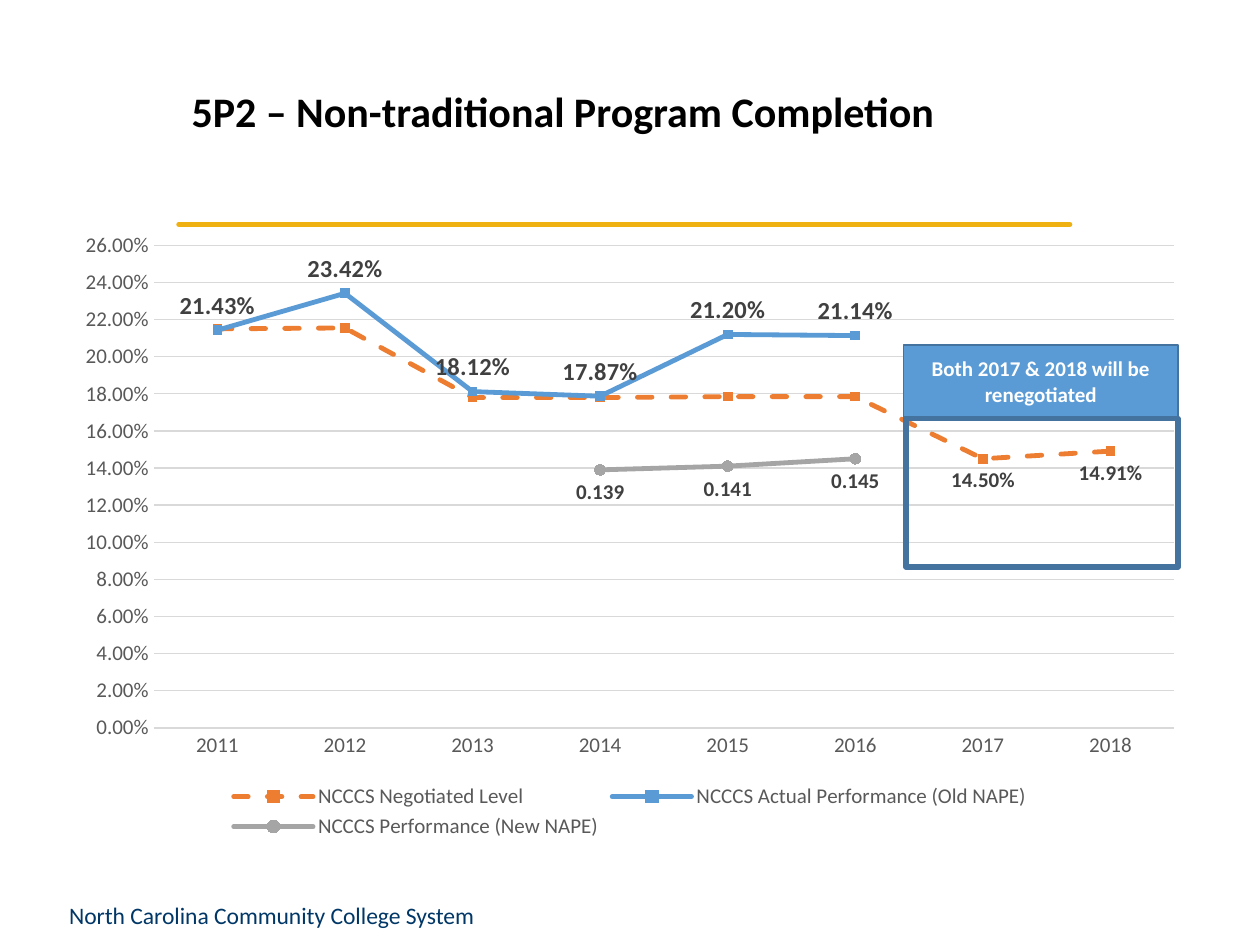
from lxml import etree
from pptx import Presentation
from pptx import util as u
from pptx.chart.data import CategoryChartData
from pptx.dml.color import RGBColor
from pptx.enum import chart as ch, dml, shapes, text
from pptx.oxml import ns

ORANGE, BLUE, GRAY = "ED7D31", "5B9BD5", "A5A5A5"
BORDER, GRID, AXIS_TEXT, LABEL_TEXT = "43739E", "D9D9D9", "595959", "404040"


def rgb(value):
    return RGBColor.from_string(value)


def box(*lengths):
    return [u.Inches(length) for length in lengths]


class SlideBuilder:
    font_name = "Calibri"

    def __init__(self, slide):
        self.slide = slide

    def style_font(self, font, size, color, bold=False):
        font.name = self.font_name
        font.size = u.Pt(size)
        font.bold = bold
        font.color.rgb = rgb(color)

    def style_line(self, line, color, width):
        line.color.rgb = rgb(color)
        line.width = u.Pt(width)

    def set_wording(self, frame, wording, size, color, bold=False, align=text.PP_ALIGN.LEFT):
        frame.text = wording
        frame.word_wrap = True
        paragraph = frame.paragraphs[0]
        paragraph.alignment = align
        self.style_font(paragraph.runs[0].font, size, color, bold)
        return paragraph

    def title(self, wording, area):
        heading = self.slide.shapes.title
        heading.left, heading.top, heading.width, heading.height = box(*area)
        heading.text_frame.vertical_anchor = text.MSO_ANCHOR.MIDDLE
        paragraph = self.set_wording(heading.text_frame, wording, 24, "000000", True)
        paragraph.line_spacing = 0.9

    def rule(self, start, end, color, width):
        connector = self.slide.shapes.add_connector(
            shapes.MSO_CONNECTOR.STRAIGHT, *box(*start, *end))
        self.style_line(connector.line, color, width)
        properties = connector._element.spPr
        properties.find(ns.qn("a:ln")).set("cap", "rnd")
        etree.SubElement(properties, ns.qn("a:effectLst"))

    def footer(self, wording, area):
        frame = self.slide.shapes.add_textbox(*box(*area)).text_frame
        self.set_wording(frame, wording, 13.5, "003767")

    def rectangle(self, area, line_width, fill=None, wording=None):
        panel = self.slide.shapes.add_shape(shapes.MSO_SHAPE.RECTANGLE, *box(*area))
        panel.shadow.inherit = False
        self.style_line(panel.line, BORDER, line_width)
        if fill:
            panel.fill.solid()
            panel.fill.fore_color.rgb = rgb(fill)
        else:
            panel.fill.background()
        if wording:
            panel.text_frame.vertical_anchor = text.MSO_ANCHOR.MIDDLE
            self.set_wording(panel.text_frame, wording, 12, "FFFFFF", True, text.PP_ALIGN.CENTER)

    def line_chart(self, area, years, measures):
        data = CategoryChartData()
        data.categories = years
        for name, values, number_format, *_ in measures:
            data.add_series(name, values, number_format)
        chart = self.slide.shapes.add_chart(
            ch.XL_CHART_TYPE.LINE_MARKERS, *box(*area), data).chart
        chart.has_title = False
        self.style_font(chart.font, 10, "000000")
        chart.has_legend = True
        chart.legend.position = ch.XL_LEGEND_POSITION.BOTTOM
        chart.legend.include_in_layout = False
        self.style_font(chart.legend.font, 12, AXIS_TEXT)
        self.axes(chart)
        plot = chart.plots[0]
        plot.vary_by_categories = False
        for series, (_, _, number_format, *look) in zip(plot.series, measures):
            self.series(series, number_format, *look)
        return plot

    def axes(self, chart):
        years, rates = chart.category_axis, chart.value_axis
        for axis in (years, rates):
            axis.major_tick_mark = ch.XL_TICK_MARK.NONE
            axis.minor_tick_mark = ch.XL_TICK_MARK.NONE
            self.style_font(axis.tick_labels.font, 12, AXIS_TEXT)
        self.style_line(years.format.line, GRID, 1)
        rates.format.line.fill.background()
        rates.minimum_scale, rates.maximum_scale, rates.major_unit = 0, 0.26, 0.02
        rates.tick_labels.number_format = "0.00%"
        rates.tick_labels.number_format_is_linked = False
        self.style_line(rates.major_gridlines.format.line, GRID, 0.75)

    def series(self, series, number_format, color, marker, marker_size, position, size, dashed):
        series.smooth = False
        line = series.format.line
        self.style_line(line, color, 2.75)
        if dashed:
            line.dash_style = dml.MSO_LINE.DASH
        series._element.spPr.find(ns.qn("a:ln")).set("cap", "rnd")
        series.marker.style = marker
        series.marker.size = marker_size
        series.marker.format.fill.solid()
        series.marker.format.fill.fore_color.rgb = rgb(color)
        self.style_line(series.marker.format.line, color, 0.75)
        labels = series.data_labels
        labels.show_value = True
        labels.position = position
        labels.number_format = number_format
        labels.number_format_is_linked = False
        self.style_font(labels.font, size, LABEL_TEXT, True)

    def hide_labels(self, series, indexes):
        labels = series.data_labels._element
        for place, index in enumerate(indexes):
            label = etree.Element(ns.qn("c:dLbl"))
            etree.SubElement(label, ns.qn("c:idx")).set("val", str(index))
            etree.SubElement(label, ns.qn("c:delete")).set("val", "1")
            labels.insert(place, label)


def main():
    deck = Presentation()
    deck.slide_width, deck.slide_height = box(10, 7.5)
    builder = SlideBuilder(deck.slides.add_slide(deck.slide_layouts[5]))

    builder.rule((1.42, 1.78), (8.49, 1.78), "EEB111", 3)
    builder.footer("North Carolina Community College System", (0.45, 7.1, 3.55, 0.4))
    builder.title("5P2 – Non-traditional Program Completion", (1.42, 0.18, 8.05, 1.45))

    square, circle = ch.XL_MARKER_STYLE.SQUARE, ch.XL_MARKER_STYLE.CIRCLE
    above, below = ch.XL_LABEL_POSITION.ABOVE, ch.XL_LABEL_POSITION.BELOW
    measures = [
        ("NCCCS Negotiated Level",
         (0.215, 0.2155, 0.178, 0.178, 0.1785, 0.1785, 0.145, 0.1491),
         "0.00%", ORANGE, square, 5, below, 12, True),
        ("NCCCS Actual Performance (Old NAPE)",
         (0.2143, 0.2342, 0.1812, 0.1787, 0.212, 0.2114, None, None),
         "0.00%", BLUE, square, 5, above, 14, False),
        ("NCCCS Performance (New NAPE)",
         (None, None, None, 0.139, 0.141, 0.145, None, None),
         "General", GRAY, circle, 6, below, 12, False),
    ]
    years = [str(year) for year in range(2011, 2019)]
    plot = builder.line_chart((0.5, 1.75, 9, 4.95), years, measures)
    builder.hide_labels(plot.series[0], range(6))

    builder.rectangle((7.19, 3.32, 2.16, 1.18), 3)
    builder.rectangle((7.17, 2.74, 2.18, 0.57), 1, BLUE, "Both 2017 & 2018 will be renegotiated")

    deck.save("out.pptx")


if __name__ == "__main__":
    main()
